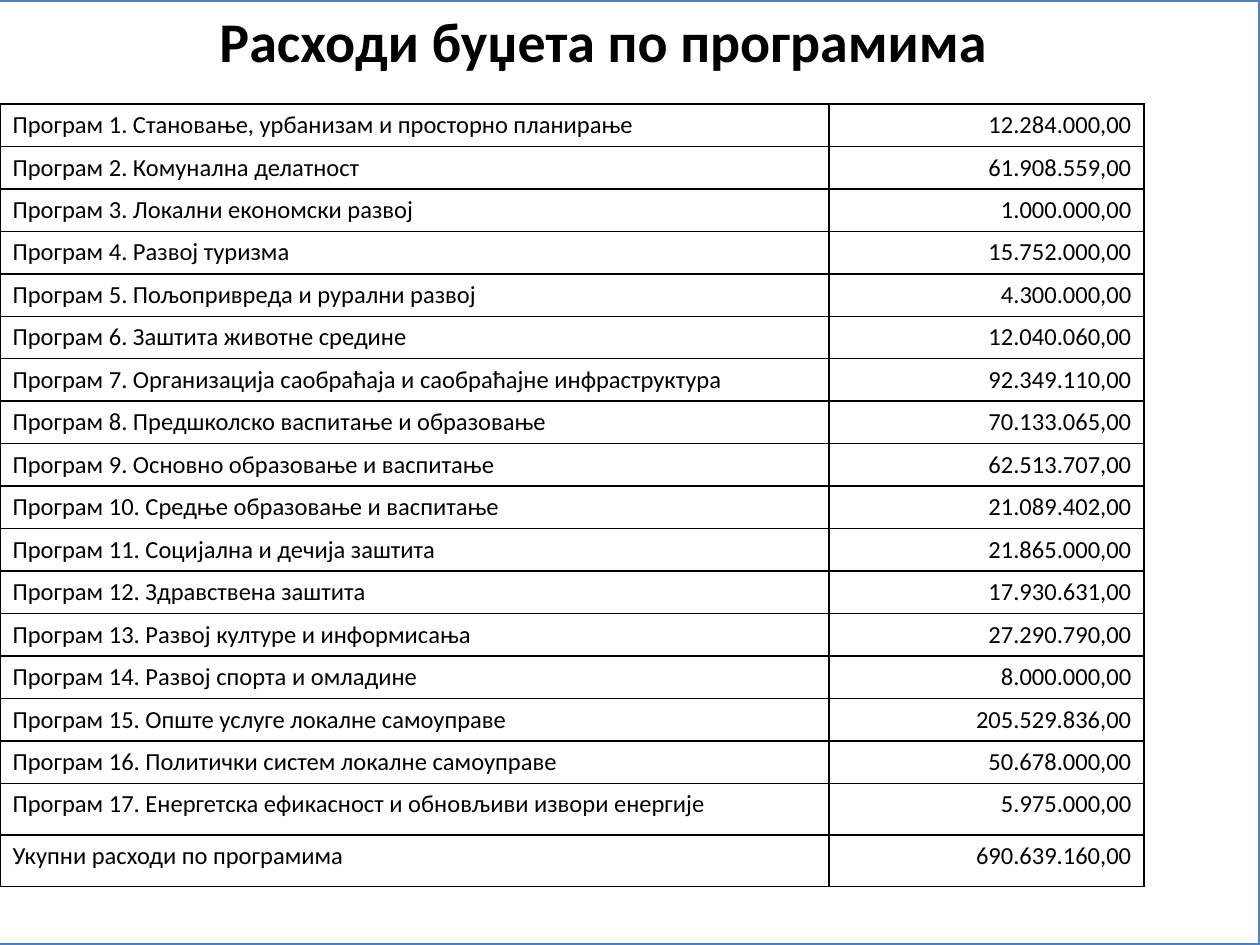
"""Build the slide of budget spending by programme."""
from dataclasses import dataclass
from typing import Any, NamedTuple

from lxml.etree import SubElement as Sub
from pptx import Presentation
from pptx.dml.color import RGBColor as Rgb
from pptx.enum.shapes import MSO_SHAPE as Kind
from pptx.enum.text import MSO_ANCHOR as Anchor, PP_ALIGN as Align
from pptx.oxml.ns import qn
from pptx.util import Inches, Pt


@dataclass(frozen=True)
class Theme:
    font: str = "Calibri"
    ink: str = "000000"
    paper: str = "FFFFFF"
    frame: str = "4F81BD"
    head: float = 32
    body: float = 14
    edge: float = 2
    rule: float = 1


class Row(NamedTuple):
    name: str
    sum: str
    tall: float = 5.39 / 16


class Box(NamedTuple):
    left: float
    top: float
    wide: float
    high: float


LOOK = Theme()
WIDE, HIGH = Inches(10), Inches(7.5)
PANEL = Box(-0.042, 0, 1.042, 1)
GRID = Box(0, 0.11, 0.908, 0.83)
COLS = (0.658, 0.25)
LAST = 0.41
TITLE = "Расходи буџета по програмима"
ROWS = (
    Row("Програм 1. Становање, урбанизам и просторно планирање", "12.284.000,00"),
    Row("Програм 2. Комунална делатност", "61.908.559,00"),
    Row("Програм 3. Локални економски развој", "1.000.000,00"),
    Row("Програм 4. Развој туризма", "15.752.000,00"),
    Row("Програм 5. Пољопривреда и рурални развој", "4.300.000,00"),
    Row("Програм 6. Заштита животне средине", "12.040.060,00"),
    Row("Програм 7. Организација саобраћаја и саобраћајне инфраструктура", "92.349.110,00"),
    Row("Програм 8. Предшколско васпитање и образовање", "70.133.065,00"),
    Row("Програм 9. Основно образовање и васпитање", "62.513.707,00"),
    Row("Програм 10. Средње образовање и васпитање", "21.089.402,00"),
    Row("Програм 11. Социјална и дечија заштита", "21.865.000,00"),
    Row("Програм 12. Здравствена заштита", "17.930.631,00"),
    Row("Програм 13. Развој културе и информисања", "27.290.790,00"),
    Row("Програм 14. Развој спорта и омладине", "8.000.000,00"),
    Row("Програм 15. Опште услуге локалне самоуправе", "205.529.836,00"),
    Row("Програм 16. Политички систем локалне самоуправе", "50.678.000,00"),
    Row("Програм 17. Енергетска ефикасност и обновљиви извори енергије", "5.975.000,00", LAST),
    Row("Укупни расходи по програмима", "690.639.160,00", LAST),
)


def put(item: Any, form: dict[str, Any]) -> None:
    """Set each attribute named in the format."""
    for name, value in form.items():
        setattr(item, name, value)


def place(box: Box) -> tuple[int, ...]:
    """Turn shares of the slide into lengths."""
    return tuple(round(part * full) for part, full in zip(box, (WIDE, HIGH) * 2))


def write(frame: Any, text: str, size: float, align: Align, bold: bool = False) -> None:
    """Write one paragraph into a text frame."""
    para = frame.paragraphs[0]
    para.alignment = align
    run = para.add_run()
    run.text = text
    put(run.font, {"name": LOOK.font, "size": Pt(size), "bold": bold})
    run.font.color.rgb = Rgb.from_string(LOOK.ink)


def rule(cell: Any) -> None:
    """Draw all four borders of a cell and clear its fill."""
    props = cell._tc.get_or_add_tcPr()
    for side in "LRTB":
        line = Sub(props, qn(f"a:ln{side}"), w=str(Pt(LOOK.rule)))
        Sub(Sub(line, qn("a:solidFill")), qn("a:srgbClr"), val=LOOK.ink)
    cell.fill.background()


def panel(slide: Any) -> None:
    """Draw the framed panel with the title."""
    shape = slide.shapes.add_shape(Kind.RECTANGLE, *place(PANEL))
    shape.shadow.inherit = False
    shape.fill.solid()
    shape.fill.fore_color.rgb = Rgb.from_string(LOOK.paper)
    shape.line.color.rgb = Rgb.from_string(LOOK.frame)
    shape.line.width = Pt(LOOK.edge)
    put(shape.text_frame, {"word_wrap": True, "vertical_anchor": Anchor.TOP})
    write(shape.text_frame, TITLE, LOOK.head, Align.CENTER, True)


def grid(slide: Any) -> None:
    """Draw the table of programmes and sums."""
    table = slide.shapes.add_table(len(ROWS), len(COLS), *place(GRID)).table
    put(table, {"first_row": False, "horz_banding": False})
    for col, share in zip(table.columns, COLS):
        col.width = round(share * WIDE)
    for line, row in zip(table.rows, ROWS):
        line.height = Inches(row.tall)
        pairs = ((row.name, Align.LEFT), (row.sum, Align.RIGHT))
        for cell, (text, align) in zip(line.cells, pairs):
            write(cell.text_frame, text, LOOK.body, align)
            rule(cell)


def main() -> None:
    """Build and save the slide."""
    deck = Presentation()
    put(deck, {"slide_width": WIDE, "slide_height": HIGH})
    slide = deck.slides.add_slide(deck.slide_layouts[6])
    panel(slide)
    grid(slide)
    deck.save("out.pptx")


if __name__ == "__main__":
    main()
